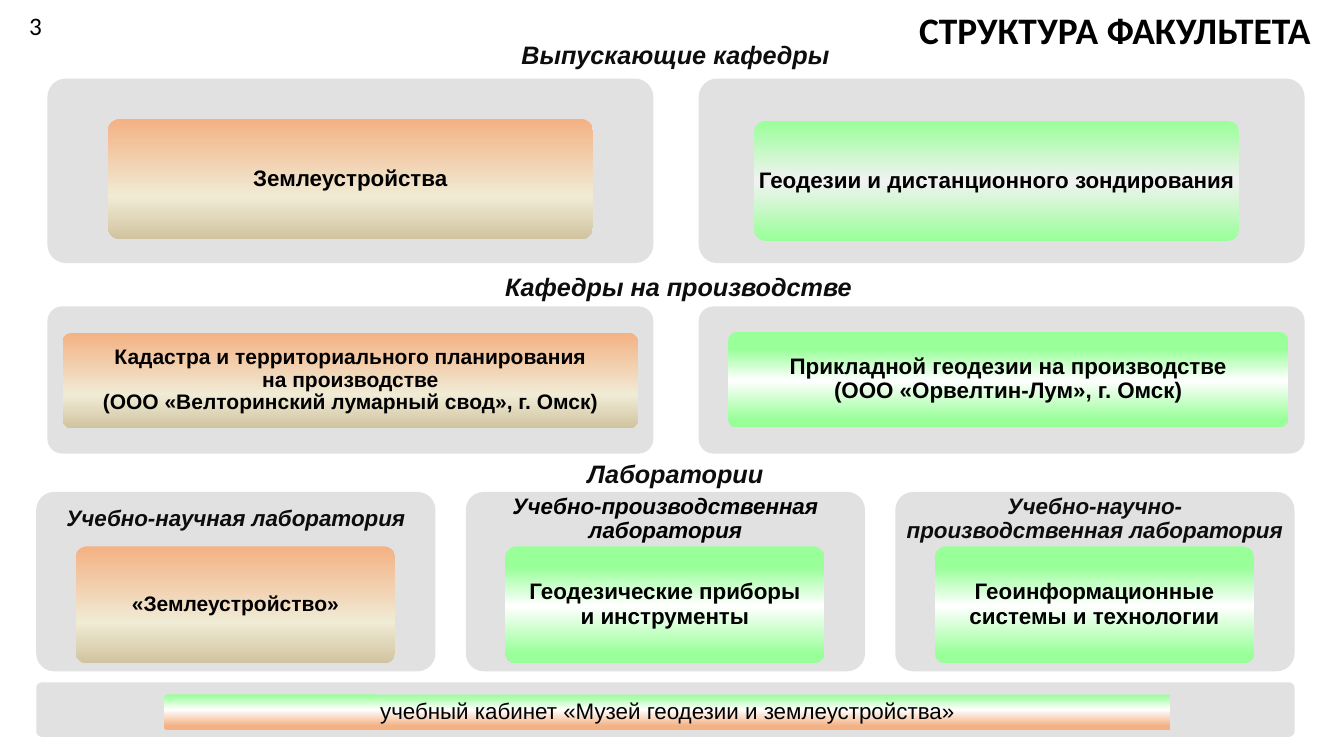
from dataclasses import dataclass

from lxml import etree
from pptx import Presentation
from pptx import util as u
from pptx.dml.color import RGBColor
from pptx.enum import shapes, text
from pptx.oxml import ns

PX = 9144  # 100 px to the inch


@dataclass(frozen=True)
class Theme:
    font: str = "Arial"
    title_font: str = "Calibri"
    black: str = "000000"
    ink: str = "0D0D0D"
    panel: str = "E1E1E1"
    # gradients run top to bottom: (percent, colour)
    sand: tuple = ((0, "F4B183"), (65, "F0EBD5"), (100, "D1C39F"))
    mint: tuple = ((0, "99FF99"), (50, "F2F2F2"), (100, "99FF99"))
    green: tuple = ((18, "99FF99"), (51, "FFFFFF"), (92, "99FF99"))
    mixed: tuple = ((1, "99FF99"), (43, "FFFFFF"), (89, "F4B183"))
    title: float = 26.7
    heading: int = 18
    label: int = 16
    small: int = 15


T = Theme()

TITLE = "СТРУКТУРА ФАКУЛЬТЕТА"
NUMBER = "3"
# text, centre x, top
HEADINGS = [
    ("Выпускающие кафедры", 670, 34),
    ("Кафедры на производстве", 673, 264),
    ("Лаборатории", 670, 450),
]
# panel top and height, then its cards: text, box, gradient, size
DEPARTMENT_ROWS = [
    (78, 183, [
        ("Землеустройства", (107, 118, 481, 119), T.sand, T.label),
        ("Геодезии и дистанционного зондирования", (748, 120, 481, 119), T.mint, T.label),
    ]),
    (304, 146, [
        ("Кадастра и территориального планирования\nна производстве\n"
         "(ООО «Велторинский лумарный свод», г. Омск)",
         (62, 330, 571, 95), T.sand, T.small),
        ("Прикладной геодезии на производстве\n(ООО «Орвелтин-Лум», г. Омск)",
         (722, 329, 556, 95), T.green, T.label),
    ]),
]
# kind, its colour, name, gradient, size
LABS = [
    ("Учебно-научная лаборатория", T.ink,
     "«Землеустройство»", T.sand, T.small),
    ("Учебно-производственная лаборатория", T.black,
     "Геодезические приборы\nи инструменты", T.green, T.label),
    ("Учебно-научно-производственная лаборатория", T.ink,
     "Геоинформационные\nсистемы и технологии", T.green, T.label),
]
MUSEUM = "учебный кабинет «Музей геодезии и землеустройства»"

DEPARTMENT_X, DEPARTMENT_W, DEPARTMENT_STEP = 47, 601, 646
LAB_X, LAB_Y, LAB_W, LAB_H, LAB_STEP = 36, 488, 396, 178, 426
LAB_HEAD, LAB_CARD_INSET, LAB_CARD_W, LAB_CARD_H = 54, 39, 317, 116

prs = Presentation()
prs.slide_width, prs.slide_height = 1333 * PX, 750 * PX
slide = prs.slides.add_slide(prs.slide_layouts[6])


def emu(box):
    return [v * PX for v in box]


def write(sp, words, size, color=T.black, font=T.font, bold=False, italic=False,
          align=text.PP_ALIGN.CENTER, anchor=text.MSO_ANCHOR.TOP,
          margins=(10, 5), wrap=True, spacing=None):
    tf = sp.text_frame
    tf.word_wrap = wrap
    tf.vertical_anchor = anchor
    tf.margin_left = tf.margin_right = margins[0] * PX
    tf.margin_top = tf.margin_bottom = margins[1] * PX
    p = tf.paragraphs[0]
    p.text = words
    p.alignment = align
    p.line_spacing = spacing
    for r in p.runs:
        r.font.name, r.font.size = font, u.Pt(size)
        r.font.bold, r.font.italic = bold, italic
        r.font.color.rgb = RGBColor.from_string(color)


def add_textbox(box, *args, **style):
    write(slide.shapes.add_textbox(*emu(box)), *args, **style)


def add_panel(box):
    sp = slide.shapes.add_shape(shapes.MSO_SHAPE.ROUNDED_RECTANGLE, *emu(box))
    sp.adjustments[0] = 0.1
    sp.shadow.inherit = False
    sp.line.fill.background()
    sp.fill.solid()
    sp.fill.fore_color.rgb = RGBColor.from_string(T.panel)
    return sp


def fill_gradient(sp, stops):
    """Fill from top to bottom with any number of stops."""
    sp.fill.gradient()
    grad = sp.fill._xPr.find(ns.qn("a:gradFill"))
    stop_list = grad.find(ns.qn("a:gsLst"))
    for stop in list(stop_list):
        stop_list.remove(stop)
    for percent, color in stops:
        stop = etree.SubElement(stop_list, ns.qn("a:gs"), pos=str(percent * 1000))
        etree.SubElement(stop, ns.qn("a:srgbClr"), val=color)
    grad.find(ns.qn("a:lin")).set("ang", "5400000")


def add_card(words, box, stops, size, bold=True):
    sp = add_panel(box)
    fill_gradient(sp, stops)
    write(sp, words, size, bold=bold, anchor=text.MSO_ANCHOR.MIDDLE,
          margins=(0, 0), spacing=0.9)


add_textbox((307, 2, 1003, 54), TITLE, T.title, font=T.title_font, bold=True,
            align=text.PP_ALIGN.RIGHT)
add_textbox((19, 5, 33, 40), NUMBER, T.heading, font=T.title_font,
            align=text.PP_ALIGN.LEFT, wrap=False)
for words, center, top in HEADINGS:
    add_textbox((center - 187, top, 374, 40), words, T.heading, T.ink,
                bold=True, italic=True, wrap=False)

for top, height, cards in DEPARTMENT_ROWS:
    for i, card in enumerate(cards):
        add_panel((DEPARTMENT_X + i * DEPARTMENT_STEP, top, DEPARTMENT_W, height))
        add_card(*card)

for i, (kind, color, name, stops, size) in enumerate(LABS):
    x = LAB_X + i * LAB_STEP
    add_panel((x, LAB_Y, LAB_W, LAB_H))
    add_textbox((x, LAB_Y, LAB_W, LAB_HEAD), kind, T.label, color, bold=True,
                italic=True, anchor=text.MSO_ANCHOR.MIDDLE, margins=(7, 7), spacing=0.9)
    add_card(name, (x + LAB_CARD_INSET, LAB_Y + LAB_HEAD, LAB_CARD_W, LAB_CARD_H),
             stops, size)

add_panel((LAB_X, 677, 2 * LAB_STEP + LAB_W, 54))
add_card(MUSEUM, (163, 689, 998, 35), T.mixed, T.label, bold=False)

prs.save("out.pptx")
